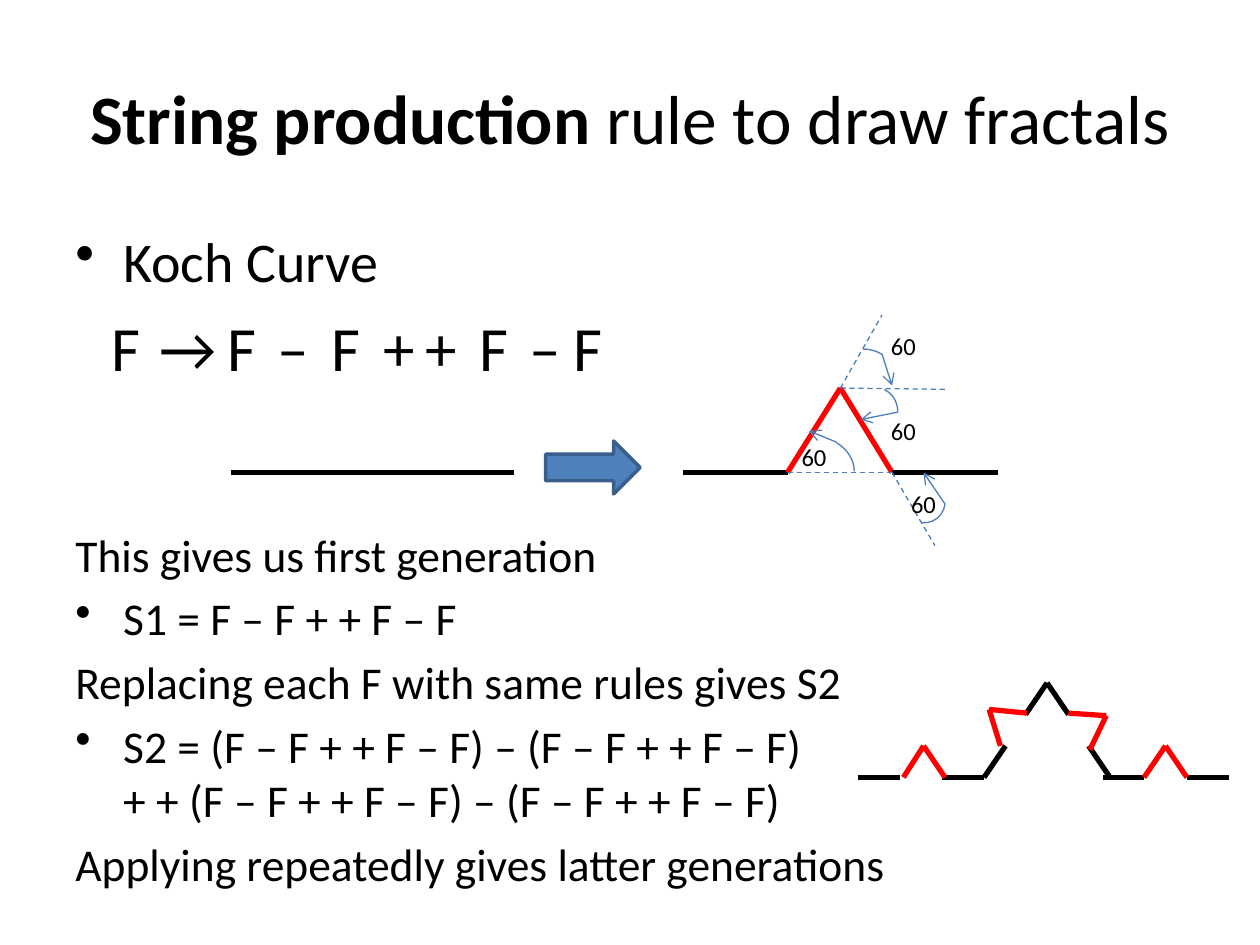
"""Build a slide on string production rules for the Koch curve."""
from itertools import pairwise

from lxml import etree
from pptx import Presentation
from pptx import util as u
from pptx.dml.color import RGBColor
from pptx.enum import dml, shapes, text
from pptx.oxml.ns import qn

BLACK = RGBColor(0, 0, 0)
RED = RGBColor(0xFF, 0, 0)
BLUE = RGBColor(0x4F, 0x81, 0xBD)
BLUE_EDGE = RGBColor(0x3A, 0x5F, 0x8C)
BLUE_LINE = RGBColor(0x4B, 0x7E, 0xBC)
FONT = "Calibri"
INDENT = 0.38
THICK, THIN = 3, 0.75

TITLE = [("String production ", True), ("rule to draw fractals", False)]
BODY = [
    ("Koch Curve", 32, True, 6.4),
    ("This gives us first generation", 26, False, 133),
    ("S1 = F – F + + F – F", 26, True, 5.2),
    ("Replacing each F with same rules gives S2", 26, False, 5.2),
    ("S2 = (F – F + + F – F) – (F – F + + F – F) \v"
     "+ + (F – F + + F – F) – (F – F + + F – F)", 26, True, 5.2),
    ("Applying repeatedly gives latter generations", 26, False, 5.2),
]
RULE = "F→F–F++F–F"
RULE_LEFTS = [0.75, 1.17, 1.67, 2.08, 2.5, 2.92, 3.25, 3.67, 4.08, 4.42]
ANGLE_LABELS = [(6.25, 3.5, 0.42, 0.25), (6.92, 2.58, 0.5, 0.33),
                (6.92, 3.25, 0.5, 0.33), (7.08, 3.83, 0.5, 0.33)]

BASE, PEAK = 3.75, 3.08
FIRST_GENERATION = [
    (BLACK, [(1.83, BASE), (4.08, BASE)]),
    (BLACK, [(5.42, BASE), (6.25, BASE)]),
    (RED, [(6.25, BASE), (6.67, PEAK), (7.08, BASE)]),
    (BLACK, [(7.08, BASE), (7.92, BASE)]),
]
GUIDES = [[(6.67, PEAK), (7, 2.5)], [(6.25, BASE), (7.08, BASE)],
          [(6.67, PEAK), (7.5, 3.09)], [(7.08, BASE), (7.42, 4.33)]]
TURNS = [[(6.64, 3.51), (6.42, 3.42)], [(7, 2.81), (7.08, 3.06)],
         [(7.13, 3.27), (6.83, 3.33)], [(7.5, 4), (7.33, BASE)]]
ARCS = [
    ((6.03, 3.45, 0.75, 0.58), 0, (189.53, 0.09)),
    ((6.6, 2.77, 0.5, 0.42), 0, (162, 187.73)),
    ((6.65, 3.1, 0.5, 0.42), 307.8, (210.55, 24.63)),
    ((7.17, 3.82, 0.33, 0.33), 95.8, (162, 0)),
]
FLOOR, BUMP = 6.17, 5.92
SECOND_GENERATION = [
    *[(BLACK, [(x, FLOOR), (x + 0.33, FLOOR)]) for x in (6.81, 7.48, 8.75, 9.42)],
    (BLACK, [(7.81, FLOOR), (7.98, BUMP)]),
    (BLACK, [(8.14, 5.67), (8.31, 5.42), (8.48, 5.67)]),
    (BLACK, [(8.81, FLOOR), (8.64, BUMP)]),
    (RED, [(7.17, FLOOR), (7.33, BUMP), (7.5, FLOOR)]),
    (RED, [(7.94, BUMP), (7.85, 5.63), (8.15, 5.66)]),
    (RED, [(8.48, 5.66), (8.78, 5.68), (8.65, 5.95)]),
    (RED, [(9.08, FLOOR), (9.25, BUMP), (9.42, FLOOR)]),
]


def inches(values):
    return [u.Inches(value) for value in values]


def style(paragraph, size):
    paragraph.font.name = FONT
    paragraph.font.size = u.Pt(size)
    paragraph.font.color.rgb = BLACK


def add_box(page, area, anchor=text.MSO_ANCHOR.MIDDLE):
    frame = page.shapes.add_textbox(*inches(area)).text_frame
    frame.word_wrap = True
    frame.vertical_anchor = anchor
    return frame


def add_label(page, words, area, size):
    paragraph = add_box(page, area).paragraphs[0]
    paragraph.text = words
    paragraph.alignment = text.PP_ALIGN.CENTER
    style(paragraph, size)


def add_chain(page, points, color, width, dashed=False, arrow=False):
    for start, end in pairwise(points):
        line = page.shapes.add_connector(
            shapes.MSO_CONNECTOR.STRAIGHT, *inches(start + end))
        line.line.color.rgb = color
        line.line.width = u.Pt(width)
        if dashed:
            line.line.dash_style = dml.MSO_LINE.DASH
        if arrow:
            etree.SubElement(line.line._get_or_add_ln(), qn("a:tailEnd"), type="arrow")
        etree.SubElement(line._element.spPr, qn("a:effectLst"))


def add_shape(page, kind, area, color, width):
    shape = page.shapes.add_shape(kind, *inches(area))
    shape.shadow.inherit = False
    shape.line.color.rgb = color
    shape.line.width = u.Pt(width)
    return shape


def add_title(page):
    paragraph = add_box(page, (0.5, 0.3, 9, 1.25)).paragraphs[0]
    paragraph.alignment = text.PP_ALIGN.CENTER
    style(paragraph, 39.6)
    for words, bold in TITLE:
        span = paragraph.add_run()
        span.text = words
        span.font.bold = bold


def add_body(page):
    frame = add_box(page, (0.5, 1.75, 9, 5.75), text.MSO_ANCHOR.TOP)
    for index, (words, size, bulleted, gap) in enumerate(BODY):
        paragraph = frame.add_paragraph() if index else frame.paragraphs[0]
        paragraph.text = words
        paragraph.space_before = u.Pt(gap)
        style(paragraph, size)
        properties = paragraph._p.get_or_add_pPr()
        properties.set("marL", str(u.Inches(INDENT)))
        properties.set("indent", str(-u.Inches(INDENT)))
        if bulleted:
            bullet = etree.Element(qn("a:buChar"), char="•")
            properties.find(qn("a:defRPr")).addprevious(bullet)


def main():
    deck = Presentation()
    deck.slide_width, deck.slide_height = inches((10, 7.5))
    page = deck.slides.add_slide(deck.slide_layouts[6])
    add_title(page)
    add_body(page)
    for color, points in FIRST_GENERATION:
        add_chain(page, points, color, THICK)
    for symbol, left in zip(RULE, RULE_LEFTS):
        add_label(page, symbol, (left, 2.5, 0.5, 0.5), 36)
    arrow = add_shape(page, shapes.MSO_SHAPE.RIGHT_ARROW,
                      (4.33, 3.5, 0.75, 0.42), BLUE_EDGE, 2)
    arrow.fill.solid()
    arrow.fill.fore_color.rgb = BLUE
    for area, rotation, angles in ARCS:
        arc = add_shape(page, shapes.MSO_SHAPE.ARC, area, BLUE_LINE, THIN)
        arc.fill.background()
        arc.rotation = rotation
        arc.adjustments[0], arc.adjustments[1] = angles
    for points in GUIDES:
        add_chain(page, points, BLUE_LINE, THIN, dashed=True)
    for points in TURNS:
        add_chain(page, points, BLUE_LINE, THIN, arrow=True)
    for area in ANGLE_LABELS:
        add_label(page, "60", area, 14)
    for color, points in SECOND_GENERATION:
        add_chain(page, points, color, THICK)
    deck.save("out.pptx")


if __name__ == "__main__":
    main()
